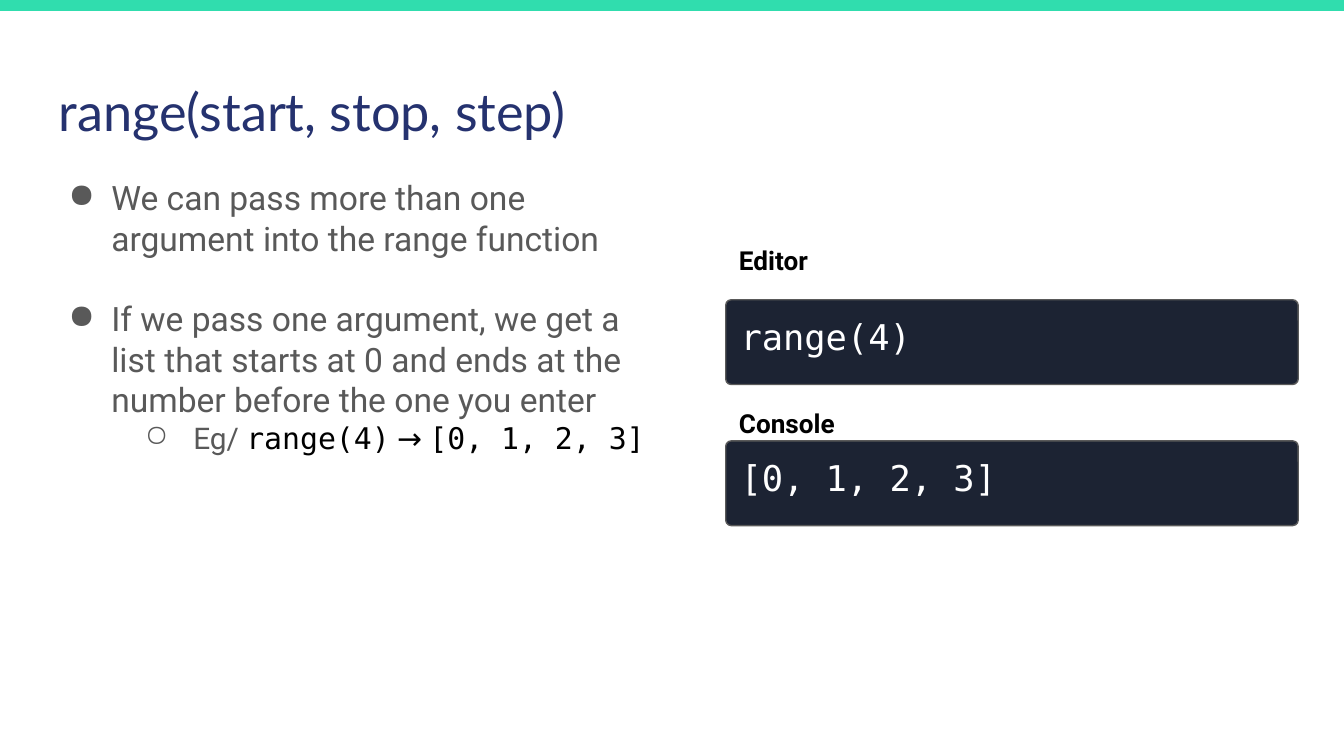
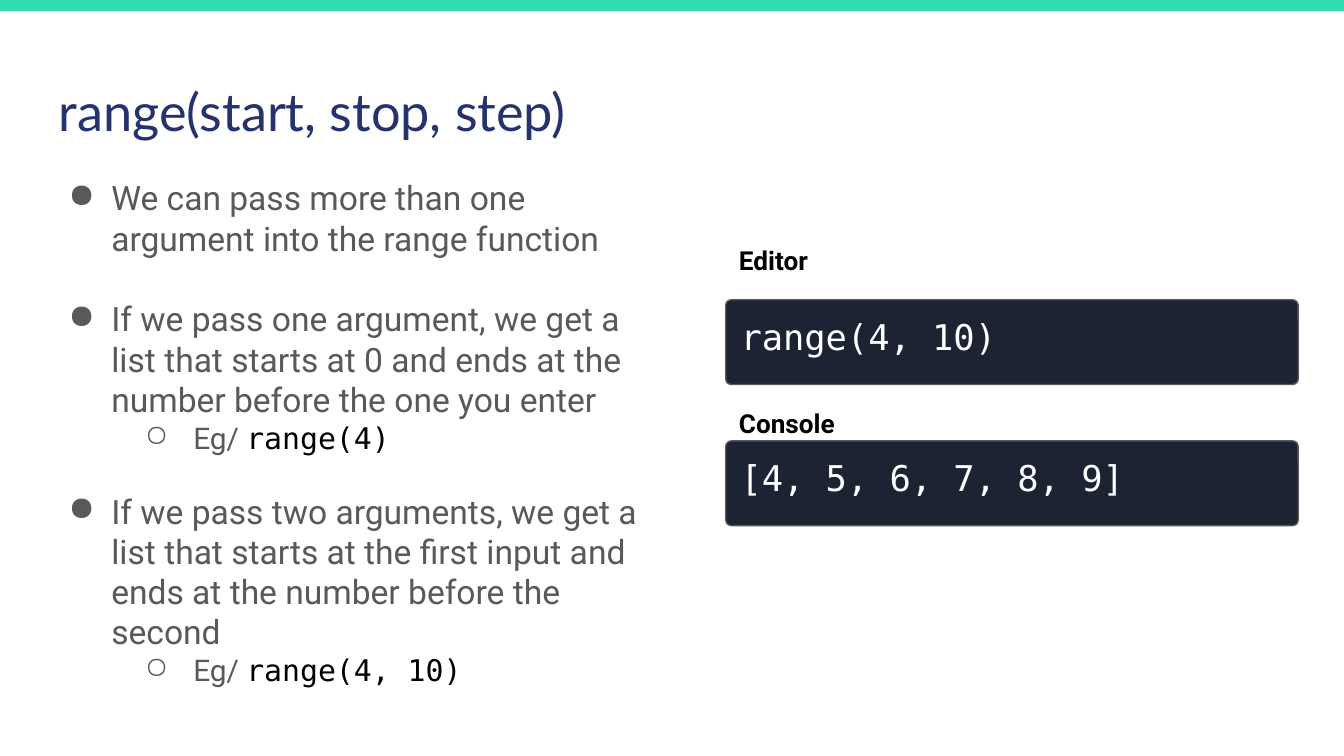
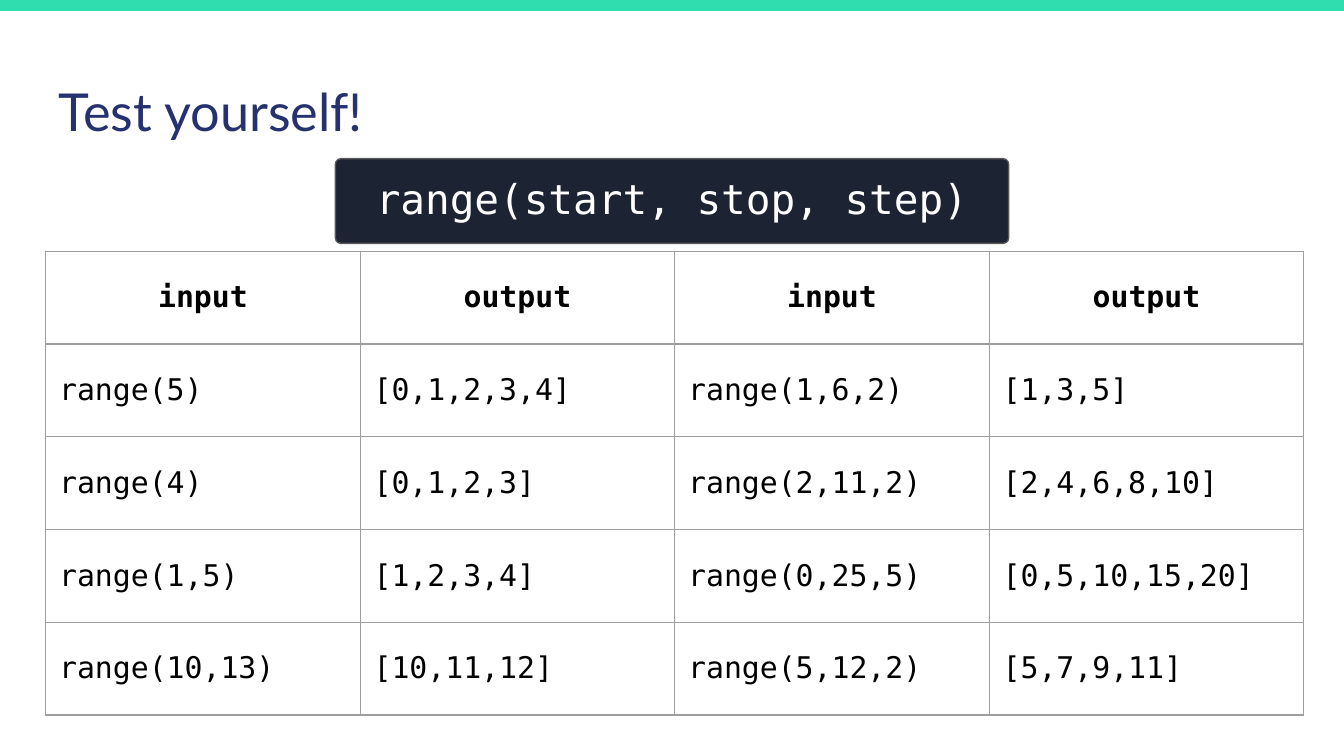
from dataclasses import dataclass
from typing import NamedTuple

from lxml import etree
from pptx import Presentation
from pptx.dml.color import RGBColor
from pptx.enum.shapes import MSO_SHAPE
from pptx.enum.text import MSO_ANCHOR, PP_ALIGN
from pptx.oxml.ns import qn
from pptx.util import Pt

RECTANGLE = MSO_SHAPE.RECTANGLE
ROUNDED = MSO_SHAPE.ROUNDED_RECTANGLE
TOP, MIDDLE = MSO_ANCHOR.TOP, MSO_ANCHOR.MIDDLE
LEFT, CENTER = PP_ALIGN.LEFT, PP_ALIGN.CENTER

TEAL, NAVY, DARK = "30DDAE", "25326F", "1C2333"
GRAY, RULE, BLACK, WHITE = "595959", "9E9E9E", "000000", "FFFFFF"
MONO, HEADING, BODY = "DejaVu Sans Mono", "Lato", "Roboto"

PAGE_WIDTH, PAGE_HEIGHT = 720, 405
MARGIN = 24.5
INSET = 7.2
CODE_LEFT = 388.8
CODE_HEIGHT = 45.4


class Frame(NamedTuple):
    left: float
    top: float
    width: float
    height: float


class Style(NamedTuple):
    font: str
    size: float
    color: str
    bold: bool = False


class Span(NamedTuple):
    text: str
    font: str = BODY
    color: str = GRAY


class Level(NamedTuple):
    indent: float
    hanging: float
    mark: str
    size: float


@dataclass
class Bullet:
    level: Level
    spans: list[Span]
    space_after: float = 0


@dataclass
class Lesson:
    bullets: list[Bullet]
    body_height: float
    editor: str
    console: str


TITLE = Style(HEADING, 28, NAVY)
LABEL = Style(BODY, 14, BLACK, True)
CODE = Style(MONO, 19, WHITE)
SIGNATURE = Style(MONO, 22, WHITE)
CELL = Style(MONO, 16, BLACK)
HEADER = CELL._replace(bold=True)

POINT = Level(28.1, 23, "●", 18)
EXAMPLE = Level(72, 25.9, "○", 16)

RANGE_CALL = "range(start, stop, step)"
PREFIX = Span("Eg/ ")
MORE_ARGUMENTS = Bullet(
    POINT, [Span("We can pass more than one argument into the range function")], 21.6)
ONE_ARGUMENT = Bullet(
    POINT,
    [Span("If we pass one argument, we get a list that starts at 0 "
          "and ends at the number before the one you enter")])
TWO_ARGUMENTS = Bullet(
    POINT,
    [Span("If we pass two arguments, we get a list that starts at the first input "
          "and ends at the number before the second")])

LESSONS = [
    Lesson(
        [MORE_ARGUMENTS, ONE_ARGUMENT,
         Bullet(EXAMPLE, [PREFIX, Span("range(4)", MONO, BLACK),
                          Span(" → ", BODY, BLACK),
                          Span("[0, 1, 2, 3]", MONO, BLACK)])],
        184.3, "range(4)", "[0, 1, 2, 3]"),
    Lesson(
        [MORE_ARGUMENTS, ONE_ARGUMENT,
         Bullet(EXAMPLE, [PREFIX, Span("range(4)", MONO, BLACK)], 19),
         TWO_ARGUMENTS,
         Bullet(EXAMPLE, [PREFIX, Span("range(4, 10)", MONO, BLACK)])],
        290.9, "range(4, 10)", "[4, 5, 6, 7, 8, 9]"),
]

QUIZ = [
    ["input", "output", "input", "output"],
    ["range(5)", "[0,1,2,3,4]", "range(1,6,2)", "[1,3,5]"],
    ["range(4)", "[0,1,2,3]", "range(2,11,2)", "[2,4,6,8,10]"],
    ["range(1,5)", "[1,2,3,4]", "range(0,25,5)", "[0,5,10,15,20]"],
    ["range(10,13)", "[10,11,12]", "range(5,12,2)", "[5,7,9,11]"],
]
COLUMN_WIDTH, ROW_HEIGHT = 168.5, 49.7


def rgb(color: str) -> RGBColor:
    return RGBColor.from_string(color)


def points(frame: Frame) -> list[Pt]:
    return [Pt(length) for length in frame]


def set_font(font, style: Style) -> None:
    font.name = style.font
    font.size = Pt(style.size)
    font.bold = style.bold
    font.color.rgb = rgb(style.color)


def set_insets(target) -> None:
    target.margin_left = target.margin_right = Pt(INSET)
    target.margin_top = target.margin_bottom = Pt(INSET)


def prepare_text(box) -> None:
    set_insets(box.text_frame)
    box.text_frame.word_wrap = True
    box.text_frame.vertical_anchor = TOP


def write_line(text_frame, text: str, style: Style, align=LEFT) -> None:
    paragraph = text_frame.paragraphs[0]
    paragraph.text = text
    paragraph.alignment = align
    set_font(paragraph.font, style)


def add_text(page, frame: Frame, text: str, style: Style) -> None:
    box = page.shapes.add_textbox(*points(frame))
    prepare_text(box)
    write_line(box.text_frame, text, style)


def add_panel(page, kind, frame: Frame, fill: str):
    panel = page.shapes.add_shape(kind, *points(frame))
    panel.shadow.inherit = False
    panel.fill.solid()
    panel.fill.fore_color.rgb = rgb(fill)
    panel.line.fill.background()
    return panel


def add_code(page, frame: Frame, text: str, style: Style, align=LEFT) -> None:
    panel = add_panel(page, ROUNDED, frame, DARK)
    panel.adjustments[0] = 0.065
    panel.line.color.rgb = rgb(GRAY)
    panel.line.width = Pt(0.75)
    prepare_text(panel)
    write_line(panel.text_frame, text, style, align)


def set_bullet(paragraph, level: Level) -> None:
    properties = paragraph._p.get_or_add_pPr()
    properties.set("marL", str(Pt(level.indent)))
    properties.set("indent", str(-Pt(level.hanging)))
    color = etree.SubElement(properties, qn("a:buClr"))
    etree.SubElement(color, qn("a:srgbClr"), val=GRAY)
    etree.SubElement(properties, qn("a:buChar"), char=level.mark)


def add_bullets(page, frame: Frame, bullets: list[Bullet]) -> None:
    box = page.shapes.add_textbox(*points(frame))
    prepare_text(box)
    text_frame = box.text_frame
    for index, bullet in enumerate(bullets):
        paragraph = text_frame.add_paragraph() if index else text_frame.paragraphs[0]
        paragraph.level = int(bullet.level is EXAMPLE)
        paragraph.space_after = Pt(bullet.space_after)
        set_bullet(paragraph, bullet.level)
        set_font(paragraph.font, Style(BODY, bullet.level.size, GRAY))
        for span in bullet.spans:
            run = paragraph.add_run()
            run.text = span.text
            if (span.font, span.color) != (BODY, GRAY):
                set_font(run.font, Style(span.font, bullet.level.size, span.color))


def set_borders(cell) -> None:
    properties = cell._tc.get_or_add_tcPr()
    for index, side in enumerate(("lnL", "lnR", "lnT", "lnB")):
        border = etree.Element(qn(f"a:{side}"), w=str(Pt(0.75)))
        fill = etree.SubElement(border, qn("a:solidFill"))
        etree.SubElement(fill, qn("a:srgbClr"), val=RULE)
        properties.insert(index, border)


def add_quiz(page, top: float, rows: list[list[str]]) -> None:
    column_count = len(rows[0])
    frame = Frame(MARGIN, top, COLUMN_WIDTH * column_count, ROW_HEIGHT * len(rows))
    table = page.shapes.add_table(len(rows), column_count, *points(frame)).table
    table.horz_banding = False
    table.first_row = False
    for column in table.columns:
        column.width = Pt(COLUMN_WIDTH)
    for row_index, (row, texts) in enumerate(zip(table.rows, rows)):
        row.height = Pt(ROW_HEIGHT)
        style, align = (CELL, LEFT) if row_index else (HEADER, CENTER)
        for cell, text in zip(row.cells, texts):
            cell.fill.background()
            cell.vertical_anchor = MIDDLE
            set_insets(cell)
            set_borders(cell)
            write_line(cell.text_frame, text, style, align)


def add_page(deck, title: str):
    page = deck.slides.add_slide(deck.slide_layouts[6])
    page.background.fill.solid()
    page.background.fill.fore_color.rgb = rgb(WHITE)
    add_panel(page, RECTANGLE, Frame(-0.7, 0, PAGE_WIDTH + 1.4, 5.8), TEAL)
    add_text(page, Frame(MARGIN, 35.3, PAGE_WIDTH - 2 * MARGIN, 45.4), title, TITLE)
    return page


def add_lesson(deck, lesson: Lesson) -> None:
    page = add_page(deck, RANGE_CALL)
    add_bullets(page, Frame(MARGIN, 87.8, 335.5, lesson.body_height), lesson.bullets)
    code_width = PAGE_WIDTH - MARGIN - CODE_LEFT
    for label, label_top, code, code_top in (
        ("Editor", 123.8, lesson.editor, 160.6),
        ("Console", 211, lesson.console, 236.2),
    ):
        add_code(page, Frame(CODE_LEFT, code_top, code_width, CODE_HEIGHT), code, CODE)
        add_text(page, Frame(CODE_LEFT, label_top, 124.6, 31.7), label, LABEL)


def main() -> None:
    deck = Presentation()
    deck.slide_width, deck.slide_height = Pt(PAGE_WIDTH), Pt(PAGE_HEIGHT)
    for lesson in LESSONS:
        add_lesson(deck, lesson)
    page = add_page(deck, "Test yourself!")
    add_quiz(page, 134.6, QUIZ)
    width = 360.7
    signature_frame = Frame((PAGE_WIDTH - width) / 2, 85, width, CODE_HEIGHT)
    add_code(page, signature_frame, RANGE_CALL, SIGNATURE, CENTER)
    deck.save("out.pptx")


if __name__ == "__main__":
    main()
